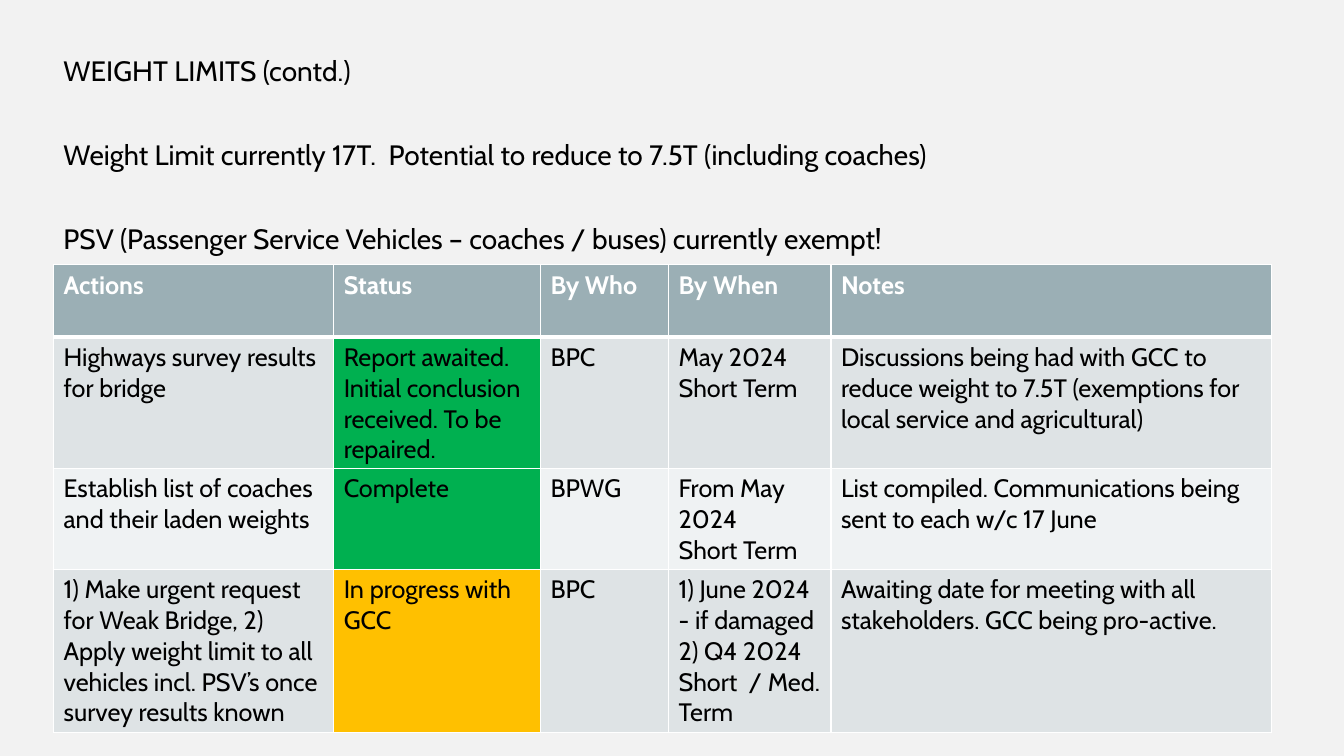
from dataclasses import dataclass

from lxml.etree import SubElement
from pptx import Presentation
from pptx.dml.color import RGBColor
from pptx.oxml.ns import qn
from pptx.util import Cm, Pt

FONT = "Cabin"
BLACK, WHITE = "000000", "FFFFFF"
PAGE_GREY, HEADER_GREY = "F2F2F2", "9BAFB5"
BAND_DARK, BAND_LIGHT = "DEE3E5", "EFF2F3"
GREEN, AMBER = "00B050", "FFC000"


@dataclass
class Action:
    task: str
    status: str
    status_color: str
    who: str
    when: str
    notes: str
    height: float

    def texts(self) -> list[str]:
        return [self.task, self.status, self.who, self.when, self.notes]


INTRO = [
    "WEIGHT LIMITS (contd.)",
    "Weight Limit currently 17T.  Potential to reduce to 7.5T (including coaches)",
    "PSV (Passenger Service Vehicles – coaches / buses) currently exempt!",
]
HEADINGS = ["Actions", "Status", "By Who", "By When", "Notes"]
COLUMN_WIDTHS = [7.06, 5.21, 3.23, 4.09, 11.1]
HEADER_HEIGHT = 1.83
ACTIONS = [
    Action("Highways survey results for bridge",
           "Report awaited. Initial conclusion received. To be repaired.", GREEN,
           "BPC", "May 2024\nShort Term",
           "Discussions being had with GCC to reduce weight to 7.5T "
           "(exemptions for local service and agricultural)", 3.28),
    Action("Establish list of coaches and their laden weights",
           "Complete", GREEN, "BPWG", "From May 2024\nShort Term",
           "List compiled. Communications being sent to each w/c 17 June", 2.55),
    Action("1) Make urgent request for Weak Bridge, 2) Apply weight limit to all "
           "vehicles incl. PSV’s once survey results known",
           "In progress with GCC", AMBER, "BPC",
           "1) June 2024 - if damaged\n2) Q4 2024\nShort  / Med. Term",
           "Awaiting date for meeting with all stakeholders. "
           "GCC being pro-active.", 4.1),
]


def rgb(color: str) -> RGBColor:
    return RGBColor.from_string(color)


def write(frame, text: str, *, size: float, color: str = BLACK,
          bold: bool = False, before: float = 0, after: float = 0) -> None:
    """Write one paragraph for each line of text."""
    frame.word_wrap = True
    for index, line in enumerate(text.split("\n")):
        para = frame.add_paragraph() if index else frame.paragraphs[0]
        para.space_before = Pt(before if index else 0)
        para.space_after = Pt(after)
        span = para.add_run()
        span.text = line
        span.font.name = FONT
        span.font.size = Pt(size)
        span.font.bold = bold
        span.font.color.rgb = rgb(color)


def add_borders(cell, bottom: float, top: float) -> None:
    properties = cell._tc.get_or_add_tcPr()
    for side, width in {"L": 1, "R": 1, "T": top, "B": bottom}.items():
        line = SubElement(properties, qn(f"a:ln{side}"), w=str(Pt(width)))
        fill = SubElement(line, qn("a:solidFill"))
        SubElement(fill, qn("a:srgbClr"), val=WHITE)


def fill_cell(cell, text: str, fill: str, *, header: bool = False,
              top: float = 1) -> None:
    add_borders(cell, bottom=3 if header else 1, top=top)
    cell.fill.solid()
    cell.fill.fore_color.rgb = rgb(fill)
    write(cell.text_frame, text, size=18, bold=header,
          color=WHITE if header else BLACK)


def add_action_table(page) -> None:
    heights = [HEADER_HEIGHT] + [action.height for action in ACTIONS]
    table = page.shapes.add_table(
        len(heights), len(HEADINGS), Cm(1.35), Cm(6.67),
        Cm(sum(COLUMN_WIDTHS)), Cm(sum(heights))).table
    for column, width in zip(table.columns, COLUMN_WIDTHS):
        column.width = Cm(width)
    for row, height in zip(table.rows, heights):
        row.height = Cm(height)

    # Header row
    for column, heading in enumerate(HEADINGS):
        fill_cell(table.cell(0, column), heading, HEADER_GREY, header=True)

    # Banded rows with a coloured status
    for row, action in enumerate(ACTIONS, start=1):
        band = BAND_DARK if row % 2 else BAND_LIGHT
        for column, text in enumerate(action.texts()):
            is_status = HEADINGS[column] == "Status"
            fill_cell(table.cell(row, column), text,
                      action.status_color if is_status else band,
                      top=3 if row == 1 else 1)


def main() -> None:
    deck = Presentation()
    deck.slide_width, deck.slide_height = Cm(33.87), Cm(19.05)
    page = deck.slides.add_slide(deck.slide_layouts[6])
    page.background.fill.solid()
    page.background.fill.fore_color.rgb = rgb(PAGE_GREY)

    # Introduction
    box = page.shapes.add_textbox(Cm(1.35), Cm(1.22), Cm(31.5), Cm(6.45))
    write(box.text_frame, "\n".join(INTRO), size=20, before=30, after=6)

    add_action_table(page)
    deck.save("out.pptx")


if __name__ == "__main__":
    main()
